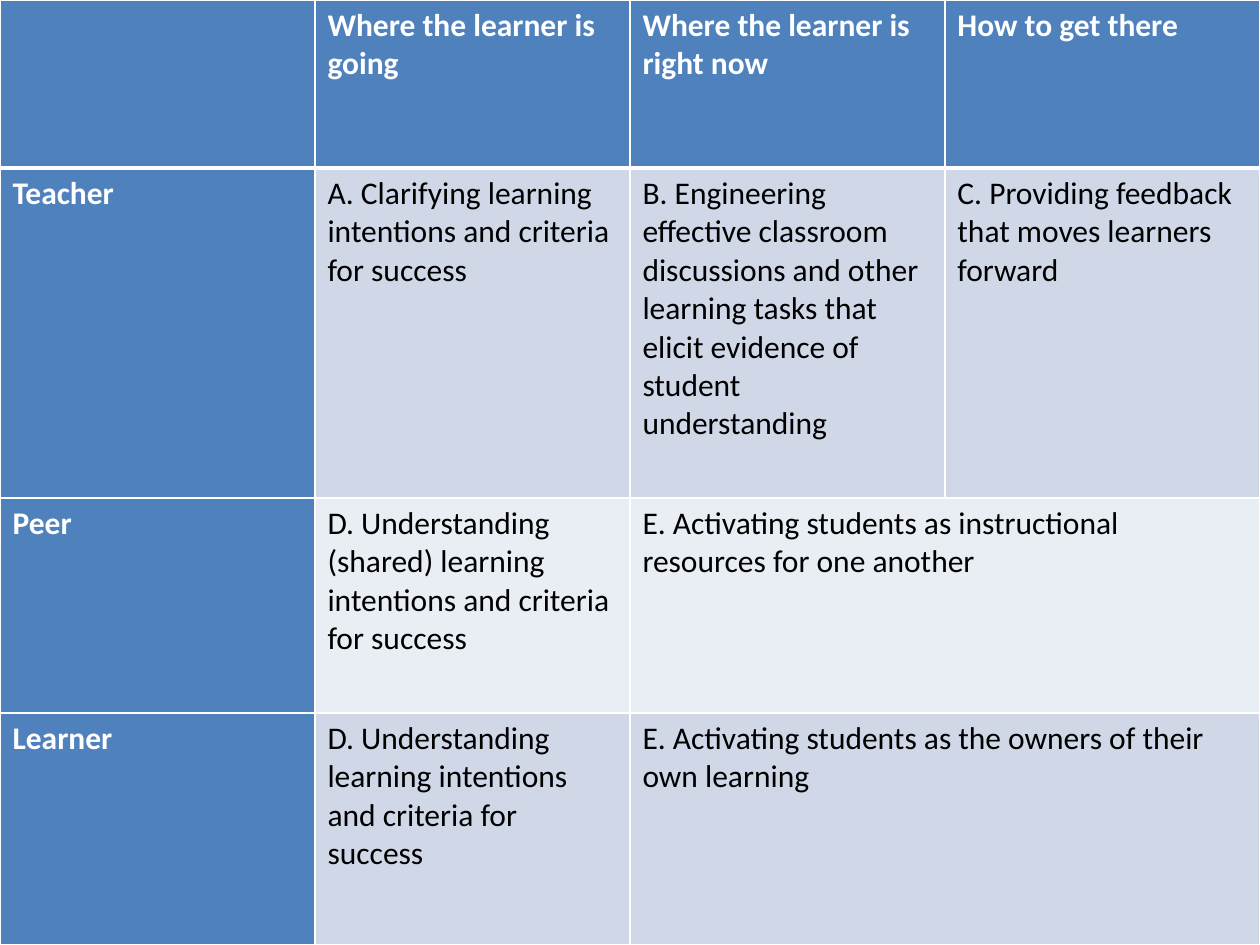
from dataclasses import dataclass

from lxml.etree import SubElement as Sub
from pptx import Presentation as Deck
from pptx.dml.color import RGBColor as Color
from pptx.oxml.ns import qn
from pptx.util import Emu, Pt

SCALE = 914400 // 126
WIDE, HIGH = 1260, 945
ROWS = [168, 330, 215, 232]
TEXT = [
    ["", "Where the learner is going", "Where the learner is right now",
     "How to get there"],
    ["Teacher",
     "A. Clarifying learning intentions and criteria for success",
     "B. Engineering effective classroom discussions and other learning "
     "tasks that elicit evidence of student understanding",
     "C. Providing feedback that moves learners forward"],
    ["Peer",
     "D. Understanding (shared) learning intentions and criteria for success",
     "E. Activating students as instructional resources for one another", ""],
    ["Learner",
     "D. Understanding learning intentions and criteria for success",
     "E. Activating students as the owners of their own learning", ""],
]


@dataclass(frozen=True)
class Theme:
    """Colours, font and type sizes."""
    back: str = "F4F1BB"
    head: str = "4F81BD"
    bands: tuple = ("E9EDF4", "D0D8E8")
    light: str = "FFFFFF"
    dark: str = "000000"
    font: str = "Calibri"
    size: int = 18
    thin: int = 1
    thick: int = 3


LOOK = Theme()


def px(num):
    """Turn pixels into EMU."""
    return Emu(num * SCALE)


def paint(fill, tone):
    """Set a solid fill."""
    fill.solid()
    fill.fore_color.rgb = Color.from_string(tone)


def edge(cell, side, width):
    """Draw one border of a cell."""
    line = Sub(cell._tc.get_or_add_tcPr(), qn(f"a:ln{side}"), w=str(Pt(width)))
    solid = Sub(line, qn("a:solidFill"))
    Sub(solid, qn("a:srgbClr"), val=LOOK.light)


def write(cell, text, bold, tone):
    """Add one run of text to a cell."""
    run = cell.text_frame.paragraphs[0].add_run()
    run.text = text
    font = run.font
    font.name, font.size, font.bold = LOOK.font, Pt(LOOK.size), bold
    font.color.rgb = Color.from_string(tone)


def style(cell, row, col, text):
    """Give a cell its borders, fill and text."""
    title = row == 0 or col == 0
    wide = {("T", 1): LOOK.thick, ("B", 0): LOOK.thick}
    for side in "LRTB":
        edge(cell, side, wide.get((side, row), LOOK.thin))
    paint(cell.fill, LOOK.head if title else LOOK.bands[row % 2])
    if text:
        write(cell, text, title, LOOK.light if title else LOOK.dark)


def grid(slide):
    """Build the table that covers the slide."""
    cols = len(TEXT[0])
    table = slide.shapes.add_table(
        len(ROWS), cols, 0, 0, px(WIDE), px(HIGH)).table
    for col in table.columns:
        col.width = px(WIDE // cols)
    for row, high in zip(table.rows, ROWS):
        row.height = px(high)
    for row, texts in enumerate(TEXT):
        for col, text in enumerate(texts):
            style(table.cell(row, col), row, col, text)
    for row in (2, 3):
        table.cell(row, 2).merge(table.cell(row, 3))


def main():
    """Make the slide and save it."""
    deck = Deck()
    deck.slide_width, deck.slide_height = px(WIDE), px(HIGH)
    slide = deck.slides.add_slide(deck.slide_layouts[6])
    paint(slide.background.fill, LOOK.back)
    grid(slide)
    deck.save("out.pptx")


main()
